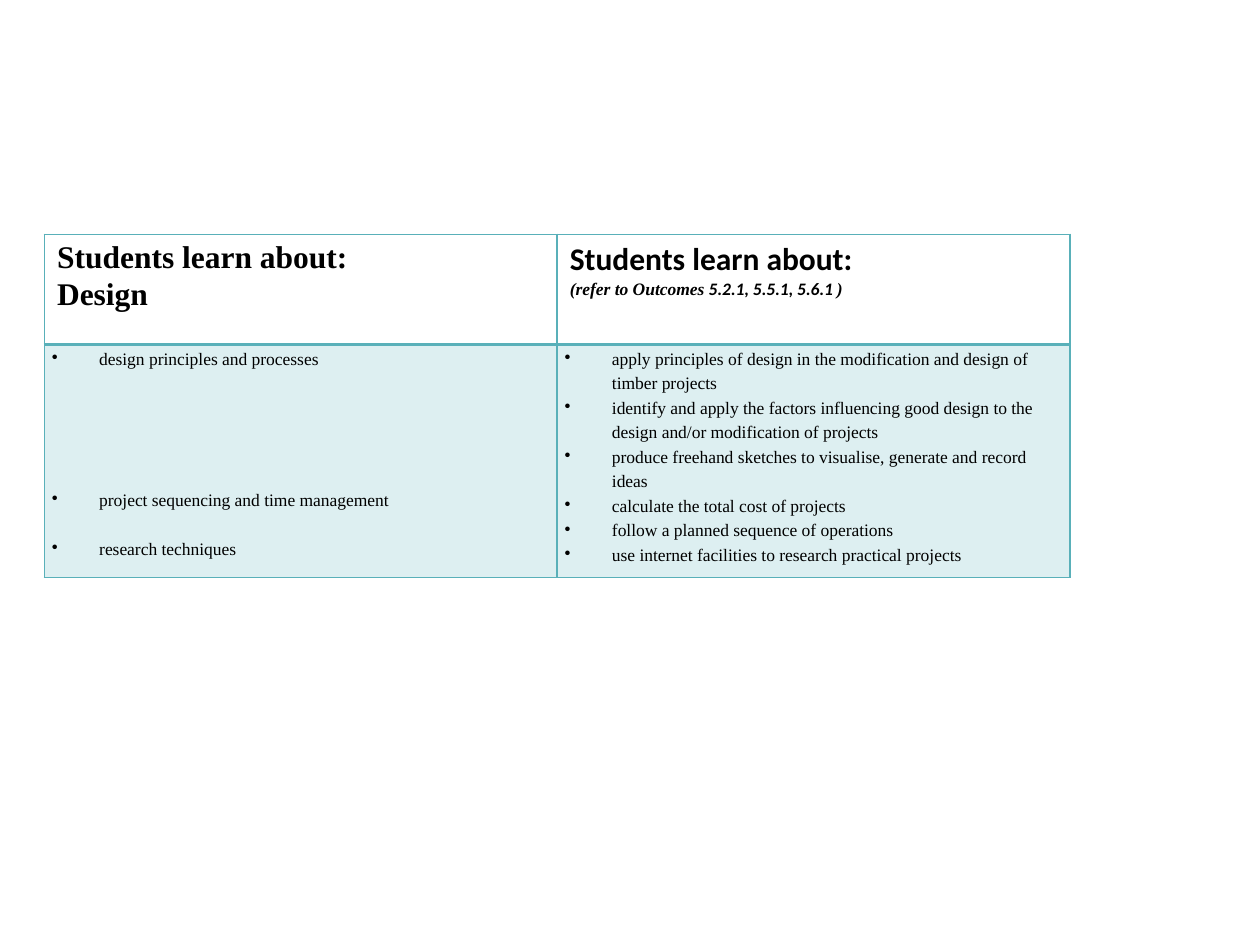
import pptx
import pptx.dml.color
import pptx.oxml
import pptx.util
from lxml import etree
from dataclasses import dataclass

Pt = pptx.util.Pt
RGB = pptx.dml.color.RGBColor.from_string
DRAWING = "http://schemas.openxmlformats.org/drawingml/2006/main"


@dataclass(frozen=True)
class Theme:
    ink: str = "000000"
    teal: str = "59B0B9"
    tint_alpha: int = 20000
    heading: int = 18
    body: int = 10
    serif: str = "Times New Roman"
    sans: str = "Calibri"


theme = Theme()


def add_text(para, text, font=theme.serif, size=theme.body, bold=False, italic=False):
    span = para.add_run()
    span.text = text
    span.font.name = font
    span.font.size = Pt(size)
    span.font.bold = bold
    span.font.italic = italic
    span.font.color.rgb = RGB(theme.ink)


def style_cell(cell, widths, tinted):
    """Give a cell its fill and its left, right, top and bottom line widths."""
    properties = cell._tc.get_or_add_tcPr()
    if tinted:
        cell.fill.solid()
        cell.fill.fore_color.rgb = RGB(theme.teal)
        color = properties.find(f".//{{{DRAWING}}}srgbClr")
        etree.SubElement(color, f"{{{DRAWING}}}alpha", val=str(theme.tint_alpha))
    else:
        cell.fill.background()
    for index, (side, width) in enumerate(zip("LRTB", widths)):
        properties.insert(index, pptx.oxml.parse_xml(
            f'<a:ln{side} xmlns:a="{DRAWING}" w="{Pt(width)}"><a:solidFill>'
            f'<a:srgbClr val="{theme.teal}"/></a:solidFill></a:ln{side}>'))


deck = pptx.Presentation()
deck.slide_width, deck.slide_height = Pt(720), Pt(540)
slide = deck.slides.add_slide(deck.slide_layouts[6])

table = slide.shapes.add_table(2, 2, Pt(25.4), Pt(134), Pt(586), Pt(196)).table
table.first_row = False
table.horz_banding = False
for column in table.columns:
    column.width = Pt(293)
for row, height in zip(table.rows, (63, 133)):
    row.height = Pt(height)

# Heading row
for column in range(2):
    style_cell(table.cell(0, column), (1, 1, 1, 2), tinted=False)

topic = table.cell(0, 0).text_frame
add_text(topic.paragraphs[0], "Students learn about:", size=theme.heading, bold=True)
para = topic.add_paragraph()
para.space_before = Pt(1)
add_text(para, "Design", size=theme.heading, bold=True)

outcomes = table.cell(0, 1).text_frame
add_text(outcomes.paragraphs[0], "Students learn about:", font=theme.sans,
         size=theme.heading, bold=True)
para = outcomes.add_paragraph()
for text, font in (("(refer to Outcomes ", theme.serif),
                   ("5.2.1, 5.5.1, 5.6.1 ", theme.sans),
                   (")", theme.serif)):
    add_text(para, text, font=font, bold=True, italic=True)

# Bulleted row: each item is its text and the space before it
bullet_lists = (
    (("design principles and processes", 0),
     ("project sequencing and time management", 66.6),
     ("research techniques", 14)),
    (("apply principles of design in the modification and design of timber projects", 0),
     ("identify and apply the factors influencing good design to the design and/or "
      "modification of projects", 0),
     ("produce freehand sketches to visualise, generate and record ideas", 0),
     ("calculate the total cost of projects", 0),
     ("follow a planned sequence of operations", 0),
     ("use internet facilities to research practical projects", 0)),
)
for column, items in enumerate(bullet_lists):
    cell = table.cell(1, column)
    style_cell(cell, (1, 1, 2, 1), tinted=True)
    cell.margin_left = cell.margin_right = Pt(4.3)
    cell.margin_top = cell.margin_bottom = Pt(0)
    for index, (text, gap) in enumerate(items):
        para = cell.text_frame.add_paragraph() if index else cell.text_frame.paragraphs[0]
        para.line_spacing = Pt(14)
        para.space_before = Pt(gap)
        properties = para._p.get_or_add_pPr()
        properties.set("marL", str(Pt(27)))
        properties.set("indent", str(Pt(-27)))
        etree.SubElement(properties, f"{{{DRAWING}}}buChar", char="•")
        tabs = etree.SubElement(properties, f"{{{DRAWING}}}tabLst")
        etree.SubElement(tabs, f"{{{DRAWING}}}tab", pos=str(Pt(18)), algn="l")
        add_text(para, text)

deck.save("out.pptx")
